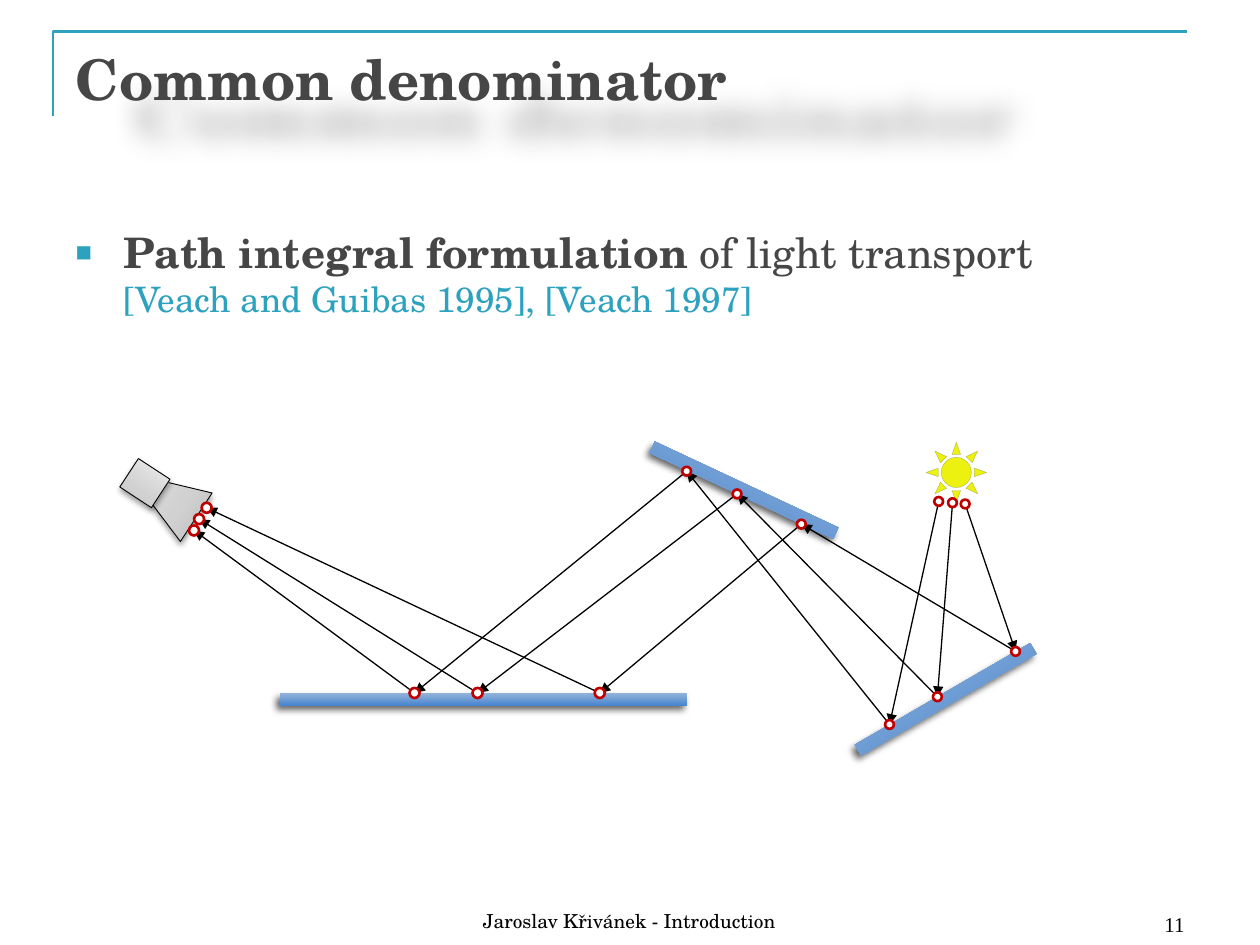
from itertools import pairwise
from pptx import Presentation
from pptx.dml.color import RGBColor
from pptx.enum.shapes import MSO_CONNECTOR as Conn, MSO_SHAPE as Kind
from pptx.enum.text import MSO_ANCHOR as Anchor, MSO_AUTO_SIZE as Fit, PP_ALIGN as Align
from pptx.oxml import parse_xml
from pptx.oxml.ns import nsdecls, qn
from pptx.util import Inches, Pt

TEAL = RGBColor(0x2D, 0xA2, 0xBF)
GRAY = RGBColor(0x46, 0x46, 0x46)
BLACK = RGBColor(0, 0, 0)
WHITE = RGBColor(255, 255, 255)
RED = RGBColor(0xC0, 0, 0)
YELLOW = RGBColor(0xEC, 0xF1, 0x0F)
SERIF, TIMES = "TeX Gyre Schola", "Times New Roman"

TITLE = "Common denominator"
LEAD = "Path integral formulation"
REST = " of light transport"
CITES = "[Veach and Guibas 1995], [Veach 1997]"
FEET = [
    ("11", (7.17, 6.98, 2.33, 0.5), Align.RIGHT, TIMES, 12),
    ("Jaroslav Křivánek - Introduction", (1.53, 6.95, 6.93, 0.5), Align.CENTER, SERIF, 11),
]
FRAME = [(0.42, 0.92), (0.42, 0.25), (9.42, 0.25)]
CAMERA = [
    (Kind.ISOSCELES_TRIANGLE, (1.06, 3.61, 0.46, 0.64), 303.2),
    (Kind.RECTANGLE, (1, 3.7, 0.3, 0.27), 33.2),
]
WALLS = [
    ((6.7, 5.5, 1.61, 0.1), 149.9),
    ((5.1, 3.84, 1.61, 0.1), 205.1),
    ((2.22, 5.5, 3.23, 0.1), 180),
]
SUN = (7.35, 3.51, 0.48, 0.48)
PATHS = [
    [(7.45, 3.98), (7.06, 5.75), (5.45, 3.74), (3.29, 5.5), (1.54, 4.21)],
    [(7.56, 3.99), (7.44, 5.53), (5.85, 3.92), (3.79, 5.5), (1.58, 4.12)],
    [(7.66, 4.0), (8.06, 5.17), (6.36, 4.16), (4.76, 5.5), (1.64, 4.03)],
]
SIZES = [0.07, 0.07, 0.07, 0.08, 0.08]
SILVER = [(0, "BDBDBD"), (35, "D1D1D1"), (100, "EEEEEE")]
BLUE = [(0, "95B3D7"), (100, "4785D1")]


def xml(text):
    head, tail = text.split(" ", 1) if " " in text.split(">")[0] else (text[:-2], "/>")
    return parse_xml(f"{head} {nsdecls('a')} {tail}")


def place(item, box):
    item.left, item.top, item.width, item.height = map(Inches, box)


def write(para, text, size, color, font=SERIF, bold=False):
    run = para.add_run()
    run.text = text
    run.font.size, run.font.name, run.font.bold = Pt(size), font, bold
    run.font.color.rgb = color


def shade(item, alpha, blur, dist, angle, extra=""):
    props = item._element.spPr
    for old in props.findall(qn("a:effectLst")):
        props.remove(old)
    props.append(xml(
        f'<a:effectLst ><a:outerShdw blurRad="{Pt(blur)}" dist="{Pt(dist)}" '
        f'dir="{angle * 60000}" {extra} rotWithShape="0"><a:srgbClr val="000000">'
        f'<a:alpha val="{alpha * 1000}"/></a:srgbClr></a:outerShdw></a:effectLst>'))


def draw(kind, box, turn=0, fill=None, line=None, width=0):
    item = slide.shapes.add_shape(kind, *map(Inches, box))
    item.shadow.inherit = False
    item.rotation = turn
    if fill is not None:
        item.fill.solid()
        item.fill.fore_color.rgb = fill
    if line is None:
        item.line.fill.background()
    else:
        item.line.color.rgb = line
        item.line.width = Pt(width)
    return item


def blend(item, stops):
    item.fill.gradient()
    old = item._element.spPr.find(qn("a:gradFill"))
    marks = "".join(
        f'<a:gs pos="{pos * 1000}"><a:srgbClr val="{tone}"/></a:gs>' for pos, tone in stops)
    new = xml(f'<a:gradFill rotWithShape="1"><a:gsLst>{marks}</a:gsLst>'
              '<a:lin ang="16200000" scaled="0"/></a:gradFill>')
    old.getparent().replace(old, new)


def ray(start, end):
    item = slide.shapes.add_connector(Conn.STRAIGHT, *map(Inches, (*start, *end)))
    item.line.color.rgb = BLACK
    item.line.width = Pt(0.75)
    item.line._get_or_add_ln().append(xml('<a:tailEnd type="triangle"/>'))
    item._element.spPr.append(xml("<a:effectLst/>"))


deck = Presentation()
deck.slide_width, deck.slide_height = Inches(10), Inches(7.5)
slide = deck.slides.add_slide(deck.slide_layouts[1])

pen = slide.shapes.build_freeform(*map(Inches, FRAME[0]))
pen.add_line_segments([tuple(map(Inches, p)) for p in FRAME[1:]], close=False)
frame = pen.convert_to_shape()
frame.shadow.inherit = False
frame.fill.background()
frame.line.color.rgb = TEAL
frame.line.width = Pt(1.5)

title, body = slide.shapes.title, slide.placeholders[1]
for item, box in ((title, (0.5, 0.3, 9, 1.25)), (body, (0.5, 1.75, 9, 4.95))):
    place(item, box)
    item.text_frame.auto_size = Fit.NONE
    item.text_frame.vertical_anchor = Anchor.TOP
    item.text_frame.paragraphs[0].alignment = Align.LEFT
write(title.text_frame.paragraphs[0], TITLE, 32, GRAY, bold=True)
shade(title, 30, 15, 28, 50, 'sx="135000" sy="100000" algn="tl"')

para = body.text_frame.paragraphs[0]
write(para, LEAD, 24, GRAY, bold=True)
write(para, REST, 24, GRAY)
para.add_line_break()
write(para, CITES, 20, TEAL)
props = para._p.get_or_add_pPr()
props.set("marL", str(Inches(0.38)))
props.set("indent", str(Inches(-0.38)))
for part in ('<a:spcBef ><a:spcPct val="20000"/></a:spcBef>',
             f'<a:buClr ><a:srgbClr val="{TEAL}"/></a:buClr>',
             '<a:buSzPct val="65000"/>',
             '<a:buFont typeface="Arial"/>',
             '<a:buChar char="■"/>'):
    props.append(xml(part))

for kind, box, turn in CAMERA:
    item = draw(kind, box, turn, line=BLACK, width=0.5)
    blend(item, SILVER)
    shade(item, 38, 3.5, 2, 90)
for box, turn in WALLS:
    item = draw(Kind.RECTANGLE, box, turn)
    blend(item, BLUE)
    shade(item, 60, 4, 3, 129)
sun = draw(Kind.SUN, SUN, fill=YELLOW, line=BLACK, width=0.25)
tone = sun.line._get_or_add_ln().find(".//" + qn("a:srgbClr"))
tone.append(xml('<a:alpha val="24000"/>'))

for path in PATHS:
    for start, end in pairwise(path):
        ray(start, end)
for path in PATHS:
    for (x, y), size in zip(path, SIZES):
        draw(Kind.OVAL, (x - size / 2, y - size / 2, size, size), fill=WHITE, line=RED, width=1.5)

for text, box, side, font, size in FEET:
    note = slide.shapes.add_textbox(*map(Inches, box)).text_frame
    note.word_wrap = True
    note.vertical_anchor = Anchor.BOTTOM
    note.paragraphs[0].alignment = side
    write(note.paragraphs[0], text, size, BLACK, font)

deck.save("out.pptx")
